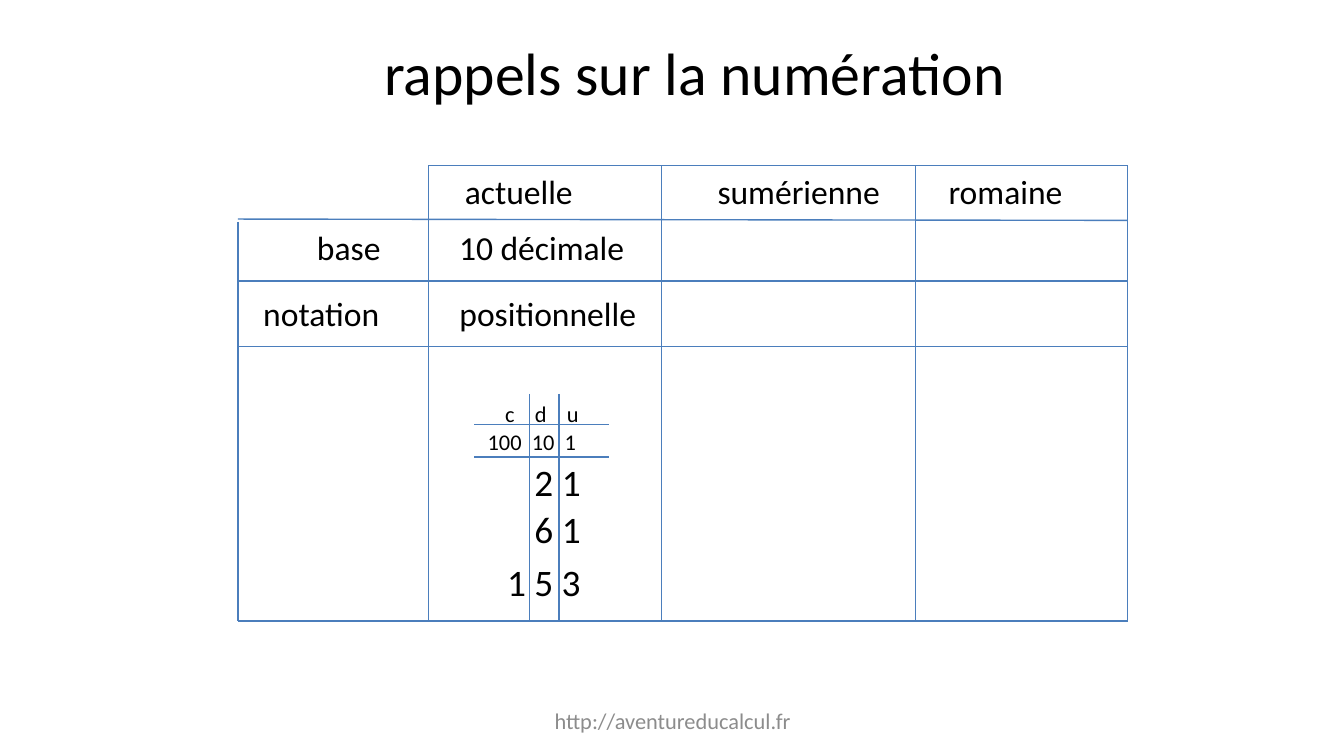
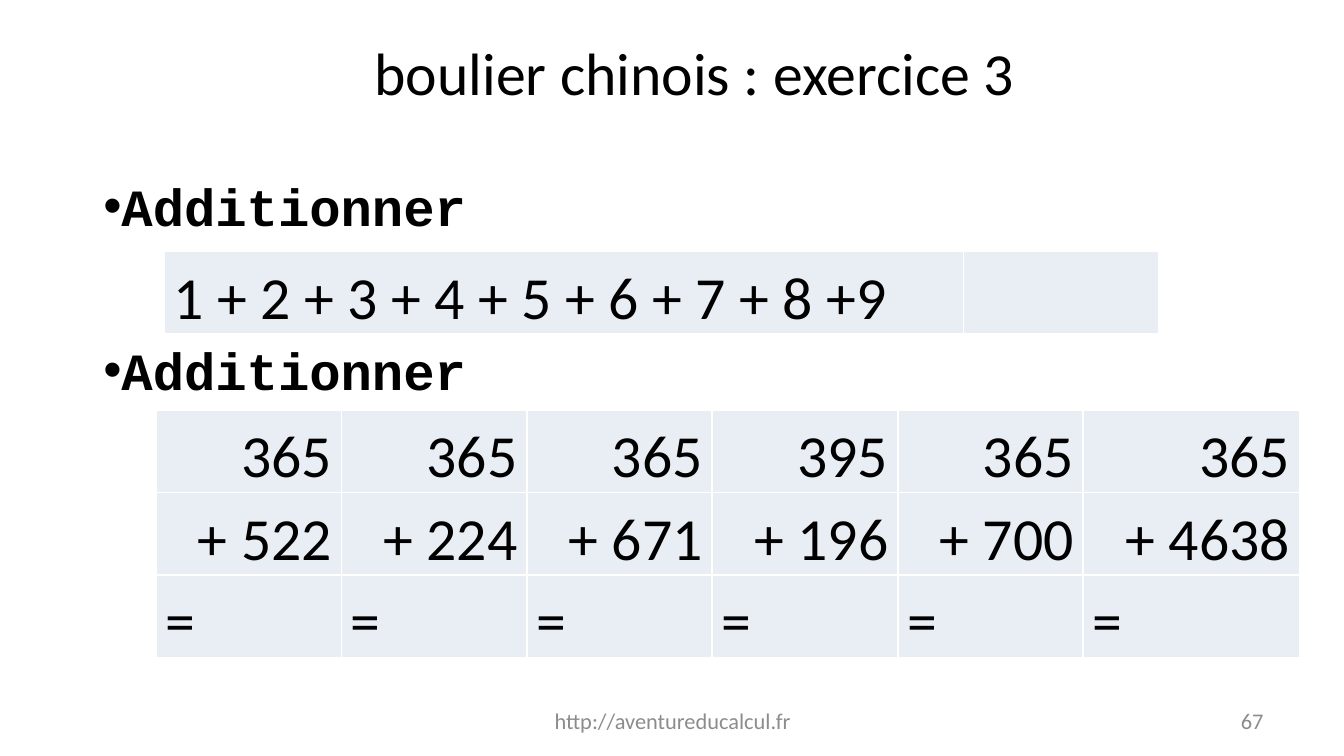
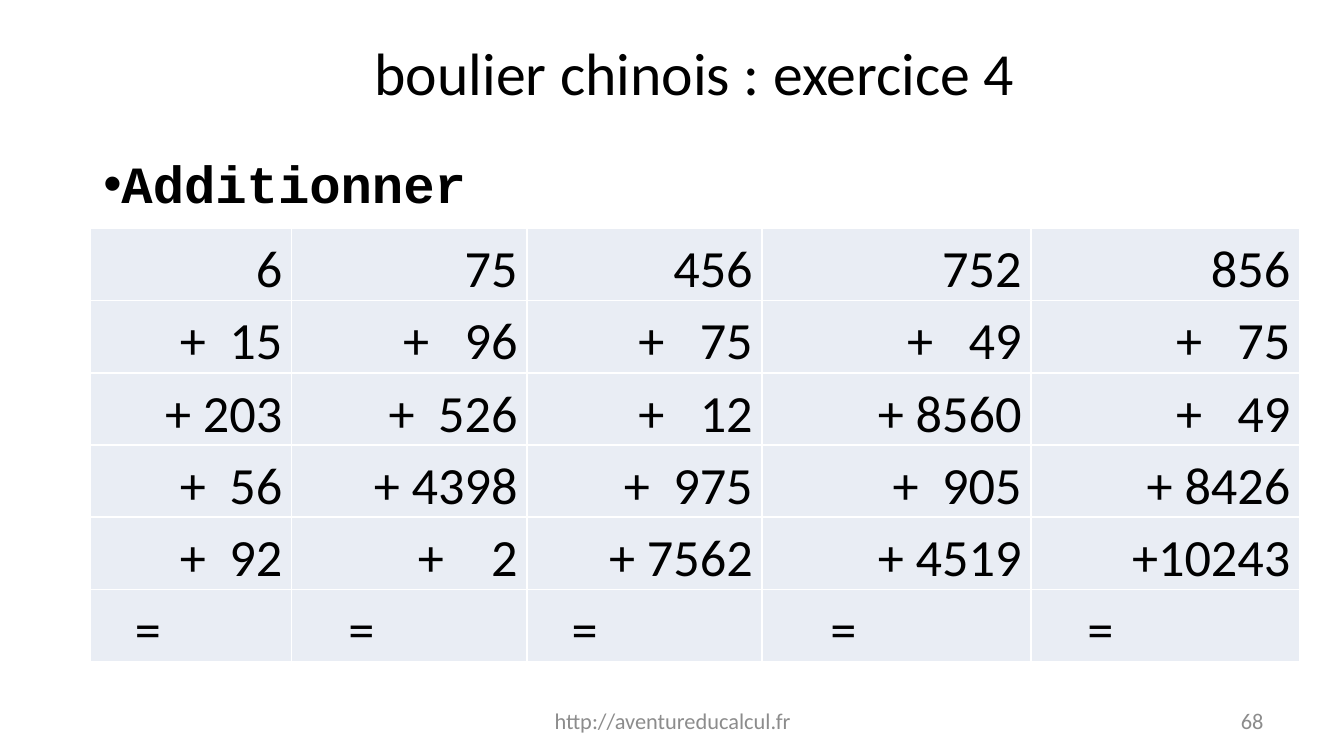
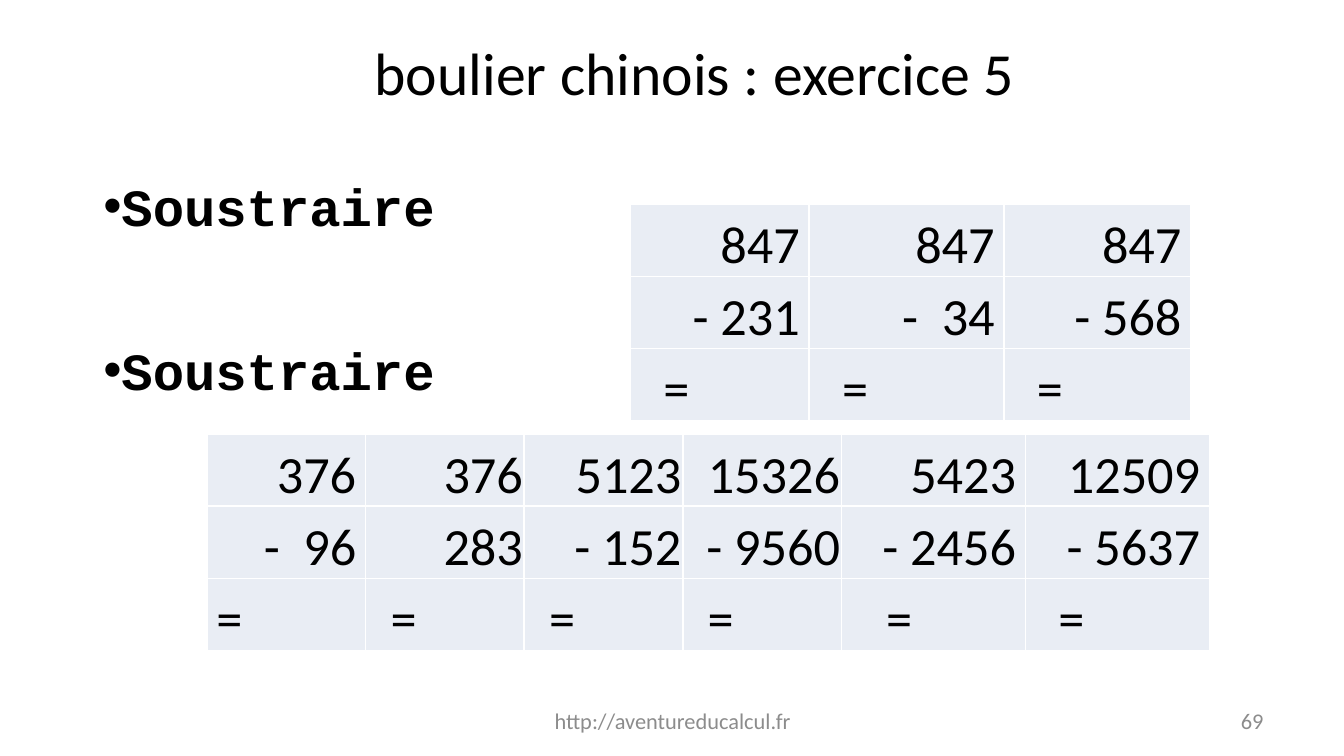
from lxml import etree
from pptx import Presentation
from pptx import util as u
from pptx.dml.color import RGBColor
from pptx.enum import shapes, text
from pptx.oxml import ns

BLACK = RGBColor(0, 0, 0)
GREY = RGBColor(0x8C, 0x8C, 0x8C)
BLUE = RGBColor(0x4B, 0x7E, 0xBC)
PALE = RGBColor(0xE9, 0xED, 0xF4)
LEFT, CENTER, RIGHT = (text.PP_ALIGN.LEFT, text.PP_ALIGN.CENTER,
                       text.PP_ALIGN.RIGHT)
SPACE_EM = 0.226  # width of a space, as a share of the text size
MAX_DIGITS = 4    # sums are lined up on four digits at most


def write(para, words, size, gap=1, align=LEFT, name="Calibri",
          colour=BLACK, bold=False):
    """Fill a paragraph, each space being stretched to the width of gap spaces."""
    para.alignment = align
    pieces = [words]
    if gap > 1:
        pieces = words.replace(" ", "| |").split("|")
    for piece in pieces:
        span = para.add_run()
        span.text = piece
        look = {"name": name, "size": u.Pt(size), "bold": bold}
        for key, value in look.items():
            setattr(span.font, key, value)
        span.font.color.rgb = colour
        if piece == " ":
            stretch = round(SPACE_EM * size * (gap - 1) * 100)
            span.font._element.set("spc", str(stretch))


deck = Presentation()
deck.slide_width, deck.slide_height = u.Inches(10), u.Inches(10 * 9 / 16)
titles = ["rappels sur la numération"]
titles += [f"boulier chinois : exercice {number}" for number in (3, 4, 5)]
pages = [deck.slides.add_slide(deck.slide_layouts[6]) for _ in titles]
numeration, exercise_3, exercise_4, exercise_5 = pages

# Title, web address and page number
for index, (page, title) in enumerate(zip(pages, titles)):
    frame_texts = [
        (title, (0.67, 0.06, 9, 0.94), 32, CENTER, BLACK),
        ("http://aventureducalcul.fr", (3.42, 5.21, 3.17, 0.3), 12, CENTER, GREY),
    ]
    if index:
        frame_texts.append(
            (str(66 + index), (7.17, 5.21, 2.33, 0.3), 12, RIGHT, GREY))
    for words, place, size, align, colour in frame_texts:
        box = page.shapes.add_textbox(*map(u.Inches, place))
        box.text_frame.word_wrap = True
        box.text_frame.vertical_anchor = text.MSO_ANCHOR.MIDDLE
        write(box.text_frame.paragraphs[0], words, size,
              align=align, colour=colour)

# Numeration grid: large table, then the small hundreds-tens-units one
grid_left, grid_right, grid_top, grid_bottom = 1.77, 8.39, 1.23, 4.62
lines = [(grid_left, y, grid_right, y) for y in (2.09, 2.58, grid_bottom)]
lines += [(x, grid_top, x, grid_bottom) for x in (3.19, 4.92, 6.81, grid_right)]
lines += [(3.19, grid_top, grid_right, grid_top),
          (grid_left, 1.63, grid_right, 1.64),
          (grid_left, 1.65, grid_left, grid_bottom)]
lines += [(x, 2.93, x, grid_bottom) for x in (3.94, 4.16)]
lines += [(3.53, y, 4.53, y) for y in (3.16, 3.4)]
for ends in lines:
    line = numeration.shapes.add_connector(
        shapes.MSO_CONNECTOR.STRAIGHT, *map(u.Inches, ends))
    line.line.color.rgb = BLUE
    line.line.width = u.Pt(0.75)
    etree.SubElement(line._element.spPr, ns.qn("a:effectLst"))

labels = [
    ("actuelle", (3.36, 1.22, 1.01, 0.4), 18, 1, LEFT),
    ("sumérienne", (5.24, 1.22, 1.42, 0.4), 18, 1, LEFT),
    ("romaine", (6.96, 1.22, 1.06, 0.4), 18, 1, LEFT),
    ("base", (2.26, 1.64, 0.68, 0.4), 18, 1, LEFT),
    ("10 décimale", (3.27, 1.64, 1.52, 0.4), 18, 1, CENTER),
    ("notation", (1.86, 2.13, 1.08, 0.4), 18, 1, LEFT),
    ("positionnelle", (3.32, 2.13, 1.53, 0.4), 18, 1, LEFT),
    ("c d u", (3.66, 2.93, 0.76, 0.3), 12, 4, LEFT),
    ("100 10 1", (3.53, 3.14, 0.87, 0.3), 12, 2, LEFT),
    ("2 1", (3.87, 3.37, 0.55, 0.44), 20, 1, RIGHT),
    ("6 1", (3.87, 3.72, 0.55, 0.44), 20, 1, RIGHT),
    ("1 5 3", (3.67, 4.11, 0.75, 0.44), 20, 1, RIGHT),
]
for words, place, size, gap, align in labels:
    box = numeration.shapes.add_textbox(*map(u.Inches, place))
    box.text_frame.word_wrap = False
    box.text_frame.auto_size = text.MSO_AUTO_SIZE.SHAPE_TO_FIT_TEXT
    write(box.text_frame.paragraphs[0], words, size, gap, align)

# Instructions
instructions = [
    (exercise_3, (0.67, 1.25, 3.02, 2.26), ["Additionner"] * 2),
    (exercise_4, (0.67, 1.08, 3.02, 1.16), ["Additionner"]),
    (exercise_5, (0.67, 1.25, 2.79, 2.26), ["Soustraire"] * 2),
]
for page, place, tasks in instructions:
    box = page.shapes.add_textbox(*map(u.Inches, place))
    frame = box.text_frame
    frame.word_wrap = True
    for index, task in enumerate(tasks):
        para = frame.add_paragraph() if index else frame.paragraphs[0]
        if index:
            para.space_before = u.Pt(54)
        properties = para._p.get_or_add_pPr()
        etree.SubElement(properties, ns.qn("a:buFont"), typeface="Arial")
        etree.SubElement(properties, ns.qn("a:buChar"), char="•")
        write(para, task, 28, name="Courier New", bold=True)

# Sums: page, left, top, height, text size, column widths, rows,
# indent of each "=" in spaces, columns with narrow margins.
# A "_" marks a gap that widens to line the signs up.
sums = [
    (exercise_3, 1.22, 1.87, 0.61, 32, [5.95, 1.45],
     [["1 + 2 + 3 + 4 + 5 + 6 + 7 + 8 +9", ""]], [], ()),
    (exercise_3, 1.16, 3.05, 1.84, 32, [1.38] * 5 + [1.61],
     [["365", "365", "365", "395", "365", "365"],
      ["+ 522", "+ 224", "+ 671", "+ 196", "+ 700", "+ 4638"]],
     [0] * 6, ()),
    (exercise_4, 0.67, 1.7, 3.22, 28, [1.5, 1.75, 1.75, 2, 2],
     [["6", "75", "456", "752", "856"],
      ["+_15", "+_96", "+_75", "+_49", "+_75"],
      ["+ 203", "+_526", "+_12", "+ 8560", "+_49"],
      ["+_56", "+ 4398", "+_975", "+_905", "+ 8426"],
      ["+_92", "+_2", "+ 7562", "+ 4519", "+10243"]],
     [3, 4, 3, 5, 4], ()),
    (exercise_5, 4.69, 1.52, 1.61, 28, [1.33, 1.45, 1.39],
     [["847", "847", "847"],
      ["- 231", "-_34", "- 568"]],
     [2, 2, 2], ()),
    (exercise_5, 1.54, 3.23, 1.61, 28, [1.18] * 4 + [1.37] * 2,
     [["376", "376", "5123", "15326", "5423", "12509"],
      ["-_96", "283", "- 152", "- 9560", "- 2456", "- 5637"]],
     [0, 2, 2, 2, 3, 2], (1, 2, 3)),
]
for page, left, top, height, size, widths, rows, indents, narrow in sums:
    if indents:
        rows = rows + [["="] * len(widths)]
    holder = page.shapes.add_table(
        len(rows), len(widths), u.Inches(left), u.Inches(top),
        u.Inches(sum(widths)), u.Inches(height))
    table = holder.table
    table.first_row = table.horz_banding = False
    for column, width in zip(table.columns, widths):
        column.width = u.Inches(width)
    for column, entries in enumerate(zip(*rows)):
        digits = min(MAX_DIGITS, max(len(entry.strip("+-_ ")) for entry in entries))
        for row, entry in enumerate(entries):
            cell = table.cell(row, column)
            side = u.Inches(0.01 if column in narrow else 0.07)
            margins = {"margin_left": side, "margin_right": side,
                       "margin_top": 0, "margin_bottom": 0}
            for key, value in margins.items():
                setattr(cell, key, value)
            properties = cell._tc.get_or_add_tcPr()
            for edge in ("lnL", "lnR", "lnT", "lnB"):
                border = etree.SubElement(
                    properties, ns.qn(f"a:{edge}"), w=str(u.Pt(1)))
                paint = etree.SubElement(border, ns.qn("a:solidFill"))
                etree.SubElement(paint, ns.qn("a:srgbClr"), val="FFFFFF")
            cell.fill.solid()
            cell.fill.fore_color.rgb = PALE
            if not entry:
                continue
            para = cell.text_frame.paragraphs[0]
            para.line_spacing = 1.15
            gap = digits + 1 - len(entry.strip("+-_")) if "_" in entry else 1
            align = RIGHT if indents and entry != "=" else LEFT
            if entry == "=":
                indent = u.Pt(indents[column] * SPACE_EM * size)
                para._p.get_or_add_pPr().set("marL", str(indent))
            write(para, entry.replace("_", " "), size, gap, align)

deck.save("out.pptx")
